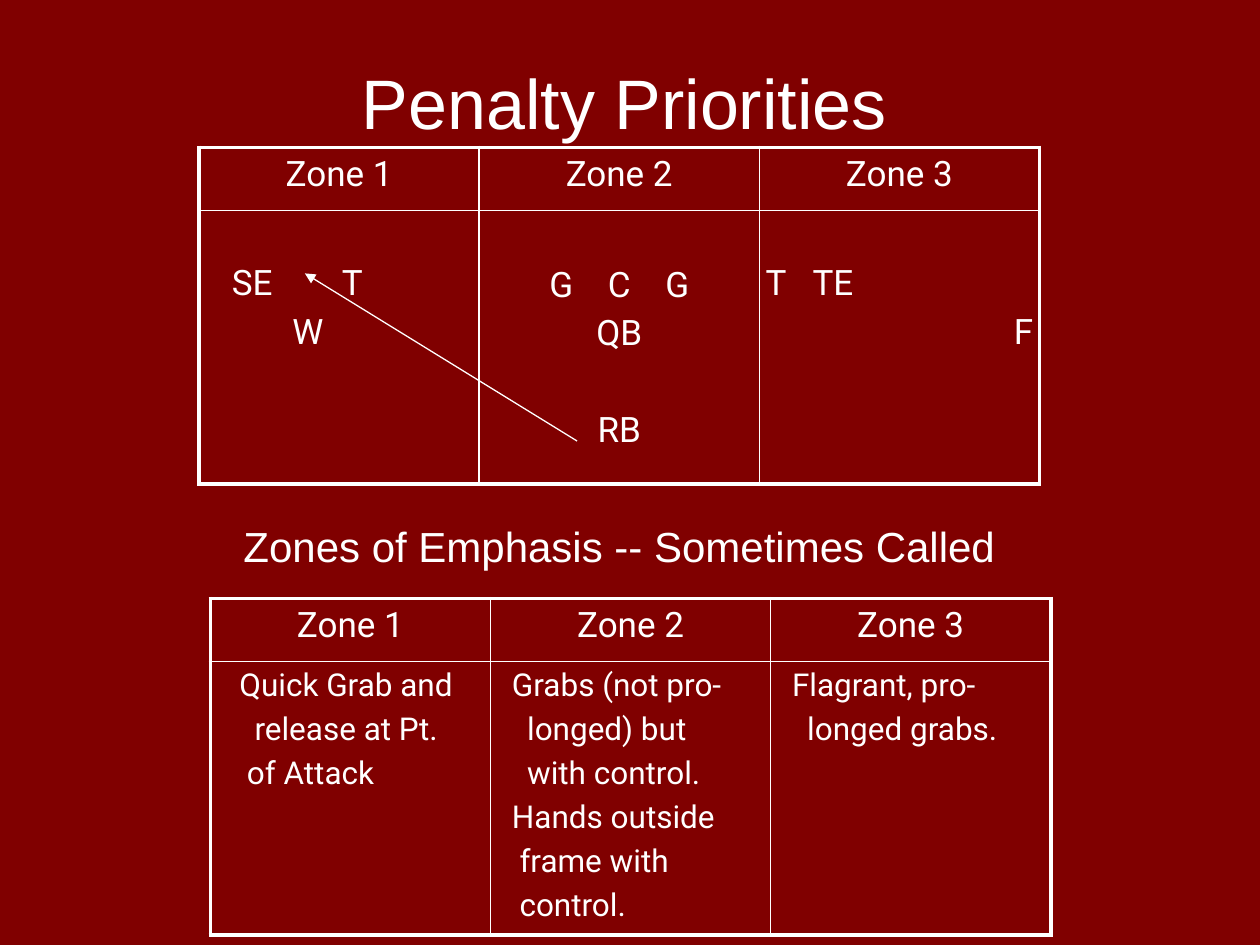
from dataclasses import dataclass

from lxml.etree import SubElement as Sub
from pptx import Presentation
from pptx.dml.color import RGBColor
from pptx.enum.shapes import MSO_CONNECTOR as Conn
from pptx.enum.text import MSO_ANCHOR as Anchor, MSO_AUTO_SIZE as Fit, PP_ALIGN as Align
from pptx.oxml.ns import qn
from pptx.util import Inches, Pt

MAROON = RGBColor(0x80, 0x00, 0x00)
WHITE = RGBColor(0xFF, 0xFF, 0xFF)
PAD = 0.05
THICK, THIN = 2.25, 1


@dataclass
class Line:
    text: str
    indent: float = 0
    align: Align = Align.LEFT
    before: float = 4
    gap: float = 0


@dataclass
class Zone:
    lines: list[Line]
    top: float = PAD
    left: float = PAD


@dataclass
class Grid:
    left: float
    top: float
    size: int
    zones: list[Zone]


PLAY = Grid(1.58, 1.17, 20, [
    Zone([Line("SE T", gap=34.6), Line("W", 0.48)], 0.42, 0.26),
    Zone([
        Line("G C G", align=Align.CENTER, gap=14.8),
        Line("QB", align=Align.CENTER),
        Line("RB", align=Align.CENTER, before=32),
    ], 0.43),
    Zone([Line("T TE", gap=9.9), Line("F", align=Align.RIGHT)], 0.42),
])
CALLS = Grid(1.67, 4.75, 18, [
    Zone([
        Line("Quick Grab and", 0.18),
        Line("release at Pt.", 0.3),
        Line("of Attack", 0.24),
    ]),
    Zone([
        Line("Grabs (not pro-", 0.12),
        Line("longed) but", 0.24),
        Line("with control.", 0.24),
        Line("Hands outside", 0.12),
        Line("frame with", 0.18),
        Line("control.", 0.18),
    ]),
    Zone([Line("Flagrant, pro-", 0.12), Line("longed grabs.", 0.24)]),
])


def style(para, size: float, face: str) -> None:
    for run in para.runs:
        run.font.size = Pt(size)
        run.font.name = face
        run.font.color.rgb = WHITE


def head(shape, text: str, box: tuple[float, ...], size: int) -> None:
    shape.left, shape.top, shape.width, shape.height = map(Inches, box)
    frame = shape.text_frame
    frame.text = text
    frame.word_wrap = True
    frame.auto_size = Fit.NONE
    frame.vertical_anchor = Anchor.TOP
    frame.margin_left = frame.margin_right = Inches(PAD)
    frame.margin_top = frame.margin_bottom = Inches(PAD)
    para = frame.paragraphs[0]
    props = para._p.get_or_add_pPr()
    props.set("marL", "0")
    props.set("indent", "0")
    Sub(props, qn("a:buNone"))
    para.alignment = Align.CENTER
    para.space_before = Pt(0)
    style(para, size, "Arial")


def edge(cell, sides: dict[str, float]) -> None:
    props = cell._tc.get_or_add_tcPr()
    for spot, (side, width) in enumerate(sides.items()):
        line = Sub(props, qn(f"a:ln{side}"), w=str(Pt(width)))
        fill = Sub(line, qn("a:solidFill"))
        Sub(fill, qn("a:srgbClr"), val=str(WHITE))
        props.insert(spot, line)


def spread(para, text: str, gap: float) -> None:
    for spot, word in enumerate(text.split()):
        if spot:
            space = para.add_run()
            space.text = " "
            space.font._element.set("spc", str(round(gap * 100)))
        para.add_run().text = word


def write(cell, zone: Zone, size: int) -> None:
    cell.margin_left, cell.margin_top = Inches(zone.left), Inches(zone.top)
    cell.margin_right = cell.margin_bottom = Inches(PAD)
    cell.vertical_anchor = Anchor.TOP
    frame = cell.text_frame
    for spot, item in enumerate(zone.lines):
        para = frame.add_paragraph() if spot else frame.paragraphs[0]
        if item.gap:
            spread(para, item.text, item.gap)
        else:
            para.text = item.text
        para.alignment = item.align
        para.space_before = Pt(item.before if spot else 0)
        props = para._p.get_or_add_pPr()
        props.set("marL", str(Inches(item.indent)))
        props.set("indent", "0")
        style(para, size, "Roboto")


def draw(slide, grid: Grid) -> None:
    count = len(grid.zones)
    high, deep = 0.5, 2.17
    table = slide.shapes.add_table(
        2, count, Inches(grid.left), Inches(grid.top),
        Inches(6.67), Inches(high + deep)).table
    table.first_row = table.horz_banding = False
    table.rows[0].height = Inches(high)
    table.rows[1].height = Inches(deep)
    for col, zone in enumerate(grid.zones):
        label = Zone([Line(f"Zone {col + 1}", align=Align.CENTER)])
        write(table.cell(0, col), label, 20)
        write(table.cell(1, col), zone, grid.size)
        for row in range(2):
            cell = table.cell(row, col)
            cell.fill.background()
            edge(cell, {
                "L": THIN if col else THICK,
                "R": THICK if col == count - 1 else THIN,
                "T": THIN if row else THICK,
                "B": THICK if row else THIN,
            })


def arrow(slide, start: tuple[float, float], end: tuple[float, float]) -> None:
    line = slide.shapes.add_connector(
        Conn.STRAIGHT, *map(Inches, start), *map(Inches, end))
    line.line.color.rgb = WHITE
    line.line.width = Pt(0.75)
    Sub(line.line._get_or_add_ln(), qn("a:tailEnd"), type="triangle")
    Sub(line._element.spPr, qn("a:effectLst"))


def main() -> None:
    deck = Presentation()
    deck.slide_width, deck.slide_height = Inches(10), Inches(7.5)
    slide = deck.slides.add_slide(deck.slide_layouts[1])
    slide.background.fill.solid()
    slide.background.fill.fore_color.rgb = MAROON
    head(slide.shapes.title, "Penalty Priorities", (0.58, 0.42, 8.75, 0.71), 40)
    head(slide.placeholders[1], "Zones of Emphasis -- Sometimes Called",
         (0.58, 4.08, 8.67, 0.48), 24)
    draw(slide, PLAY)
    arrow(slide, (4.58, 3.5), (2.42, 2.17))
    draw(slide, CALLS)
    deck.save("out.pptx")


if __name__ == "__main__":
    main()
